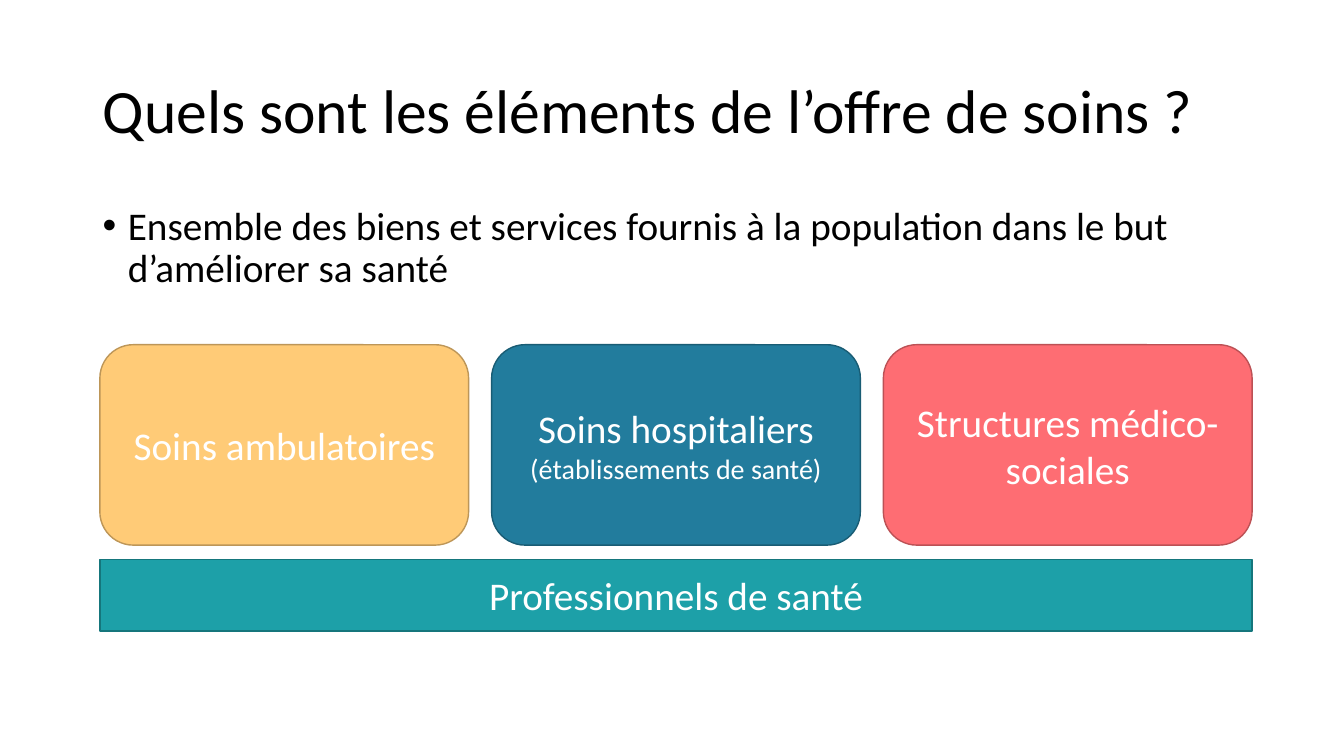
import dataclasses

import lxml.etree
import pptx
import pptx.dml.color
import pptx.enum.shapes
import pptx.enum.text
import pptx.oxml.ns
import pptx.util

Shape = pptx.enum.shapes.MSO_SHAPE
Align = pptx.enum.text.PP_ALIGN
Anchor = pptx.enum.text.MSO_ANCHOR

WIDE = pptx.util.Inches(13.33)
HIGH = pptx.util.Inches(7.5)
GRID = 100


@dataclasses.dataclass(frozen=True)
class Theme:
    """Colours and type sizes of the slide."""
    font: str = "Calibri"
    ink: str = "000000"
    pale: str = "FFFFFF"
    amber: tuple = ("FFCB77", "BD9658")
    blue: tuple = ("227C9D", "195C74")
    coral: tuple = ("FE6D73", "BC5155")
    teal: tuple = ("1DA0A8", "15767C")
    title: int = 44
    main: int = 28
    small: int = 20


THEME = Theme()


def place(box):
    """Turn a box in grid columns and rows into slide lengths."""
    left, top, width, height = box
    return (int(left * WIDE / GRID), int(top * HIGH / GRID),
            int(width * WIDE / GRID), int(height * HIGH / GRID))


def tint(color):
    """Return the RGB colour for a hex string."""
    return pptx.dml.color.RGBColor.from_string(color)


def style(para, size, color):
    """Set font, size and colour on the runs of a paragraph."""
    for run in para.runs:
        run.font.name = THEME.font
        run.font.size = pptx.util.Pt(size)
        run.font.color.rgb = tint(color)


def write(slide, box, text, size, anchor):
    """Add a wrapped text box and return its only paragraph."""
    frame = slide.shapes.add_textbox(*place(box)).text_frame
    frame.word_wrap = True
    frame.vertical_anchor = anchor
    frame.text = text
    para = frame.paragraphs[0]
    para.line_spacing = 0.9
    style(para, size, THEME.ink)
    return para


def head(slide, box):
    """Add the slide title."""
    write(slide, box, "Quels sont les éléments de l’offre de soins ?",
          THEME.title, Anchor.MIDDLE)


def body(slide, box):
    """Add the bulleted definition."""
    para = write(slide, box,
                 "Ensemble des biens et services fournis à la population "
                 "dans le but d’améliorer sa santé", THEME.main, Anchor.TOP)
    props = para._p.get_or_add_pPr()
    indent = pptx.util.Inches(0.25)
    props.set("marL", str(indent))
    props.set("indent", str(-indent))
    font = lxml.etree.SubElement(props, pptx.oxml.ns.qn("a:buFont"))
    font.set("typeface", "Arial")
    mark = lxml.etree.SubElement(props, pptx.oxml.ns.qn("a:buChar"))
    mark.set("char", "•")


def block(slide, box, kind, colors, lines):
    """Add a filled shape with centred lines of text."""
    shape = slide.shapes.add_shape(kind, *place(box))
    shape.shadow.inherit = False
    fill, edge = colors
    shape.fill.solid()
    shape.fill.fore_color.rgb = tint(fill)
    shape.line.color.rgb = tint(edge)
    shape.line.width = pptx.util.Pt(1)
    frame = shape.text_frame
    frame.word_wrap = True
    frame.vertical_anchor = Anchor.MIDDLE
    frame.text = "\n".join(lines)
    for para, size in zip(frame.paragraphs, (THEME.main, THEME.small)):
        para.alignment = Align.CENTER
        style(para, size, THEME.pale)


def offer(slide, box):
    """Add the row of care sectors and the bar that underlies them."""
    left, top, width, height = box
    cards = (
        (THEME.amber, ["Soins ambulatoires"]),
        (THEME.blue, ["Soins hospitaliers", "(établissements de santé)"]),
        (THEME.coral, ["Structures médico-sociales"]),
    )
    gap = 0.02 * width
    step = (width + gap) / len(cards)
    for index, (colors, lines) in enumerate(cards):
        card = (left + index * step, top, step - gap, 0.7 * height)
        block(slide, card, Shape.ROUNDED_RECTANGLE, colors, lines)
    bar = (left, top + 0.75 * height, width, 0.25 * height)
    block(slide, bar, Shape.RECTANGLE, THEME.teal, ["Professionnels de santé"])


def main():
    """Build the slide and save it."""
    deck = pptx.Presentation()
    deck.slide_width = WIDE
    deck.slide_height = HIGH
    slide = deck.slides.add_slide(deck.slide_layouts[6])
    head(slide, (6.9, 5.33, 86.25, 19.33))
    body(slide, (6.9, 26.67, 86.25, 63.47))
    offer(slide, (7.43, 45.6, 85.73, 37.87))
    deck.save("out.pptx")


if __name__ == "__main__":
    main()
